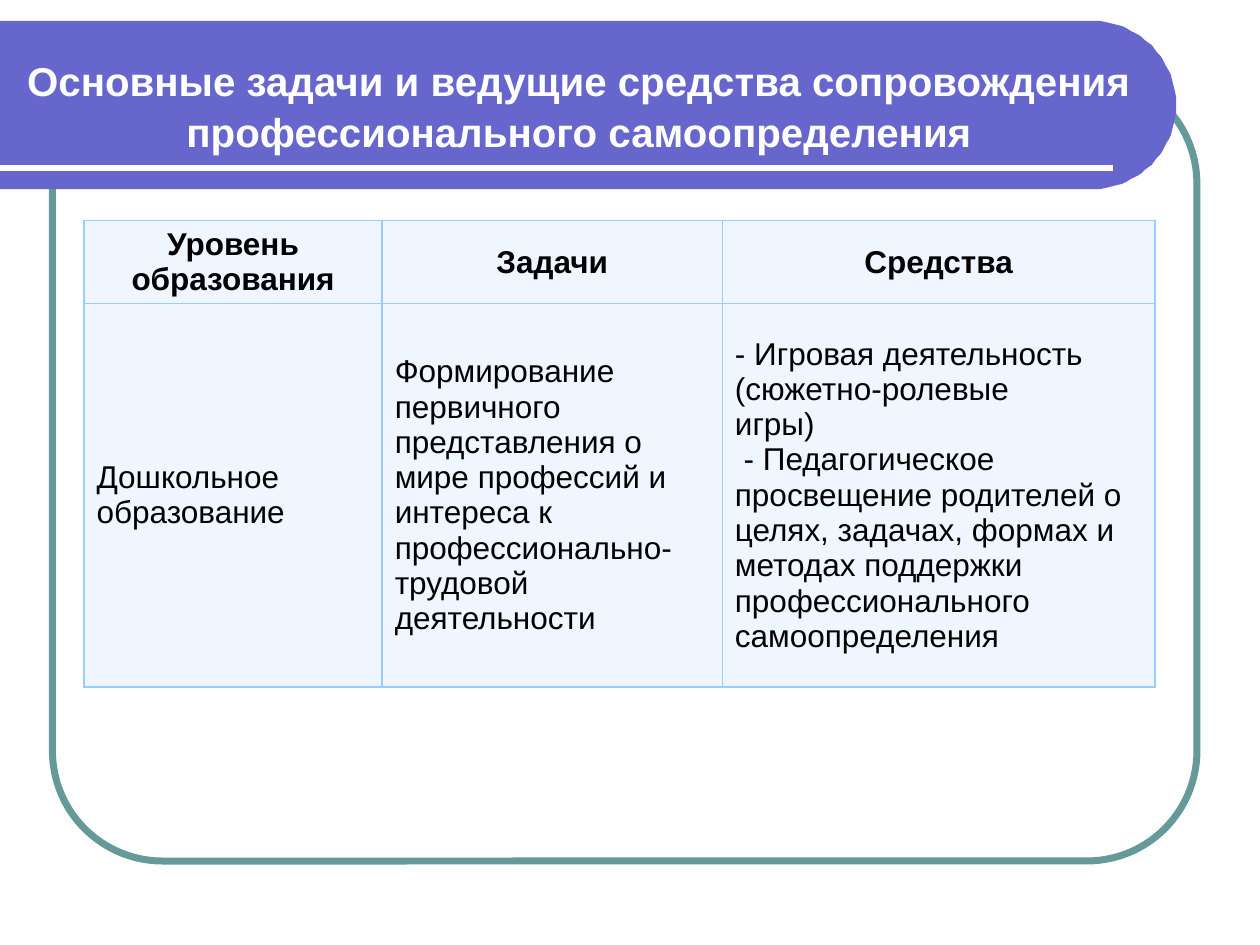
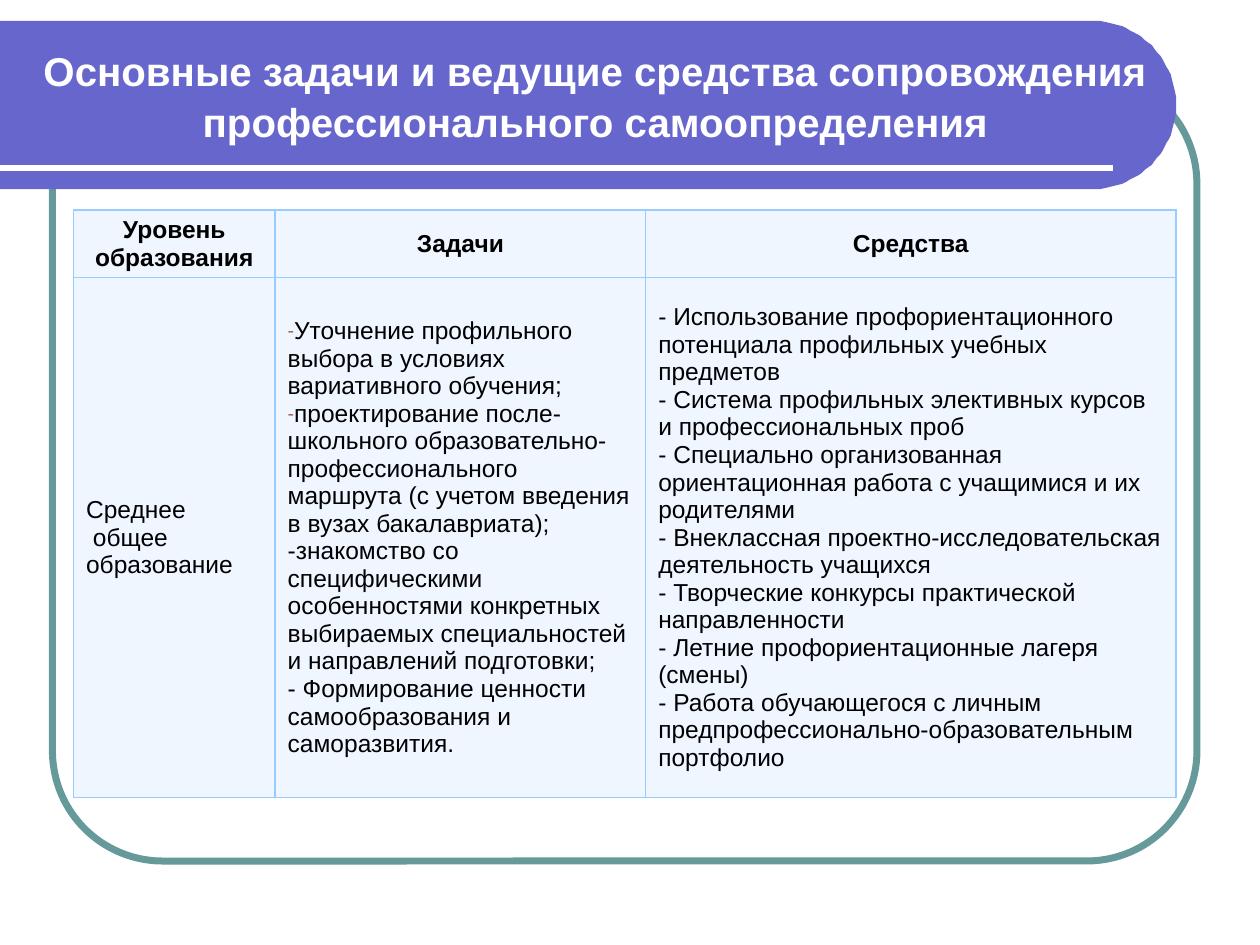
import math
from lxml import etree
from pptx import Presentation, util as u
from pptx.dml.color import RGBColor
from pptx.enum import shapes, text
from pptx.oxml import ns

PX = 7620
HUES = {"white": "FFFFFF", "band": "6666CC", "frame": "669999", "edge": "99CCFF",
        "cell": "EFF6FF", "ink": "000000", "dash": "996666"}
TITLE = "Основные задачи и ведущие средства сопровождения профессионального самоопределения"
HEADS = ["Уровень образования", "Задачи", "Средства"]
DASH = "• "

PRESCHOOL = [
    ["Дошкольное образование"],
    ["Формирование первичного представления о мире профессий и интереса к "
     "профессионально-трудовой деятельности"],
    ["- Игровая деятельность (сюжетно-ролевые",
     "игры)",
     " - Педагогическое просвещение родителей о",
     "целях, задачах, формах и методах поддержки профессионального",
     "самоопределения"],
]
SECONDARY = [
    ["Среднее", " общее", "образование"],
    [DASH + "Уточнение профильного выбора в условиях вариативного обучения;",
     DASH + "проектирование после-",
     "школьного образовательно-",
     "профессионального маршрута (с учетом введения в вузах бакалавриата);",
     "-знакомство со специфическими особенностями конкретных выбираемых "
     "специальностей и направлений подготовки;",
     "- Формирование ценности",
     "самообразования и саморазвития."],
    ["- Использование профориентационного",
     "потенциала профильных учебных предметов",
     "- Система профильных элективных курсов",
     "и профессиональных проб",
     "- Специально организованная ориентационная работа с учащимися и их",
     "родителями",
     "- Внеклассная проектно-исследовательская",
     "деятельность учащихся",
     "- Творческие конкурсы практической",
     "направленности",
     "- Летние профориентационные лагеря (смены)",
     "- Работа обучающегося с личным",
     "предпрофессионально-образовательным",
     "портфолио"],
]


def hue(name):
    return RGBColor.from_string(HUES[name])


def node(parent, tag, **attrs):
    return etree.SubElement(parent, ns.qn("a:" + tag), attrs)


class Deck:
    """Holds the shared style and the current slide."""

    def __init__(self):
        self.prs = Presentation()
        self.prs.slide_width, self.prs.slide_height = 1200 * PX, 900 * PX

    def start(self):
        self.slide = self.prs.slides.add_slide(self.prs.slide_layouts[6])
        self.items = self.slide.shapes
        self.frame(50, 70, 1090, 750)
        self.band(20, 1120, 80)
        self.rule(0, 1060, 160)

    def frame(self, *box):
        item = self.items.add_shape(shapes.MSO_SHAPE.ROUNDED_RECTANGLE, *[n * PX for n in box])
        item.adjustments[0] = 0.14
        item.shadow.inherit = False
        item.fill.background()
        item.line.color.rgb = hue("frame")
        item.line.width = u.Pt(4)

    def band(self, top, right, radius):
        hub, mid = right - radius, top + radius
        turns = [math.radians(deg) for deg in range(-90, 91, 3)]
        arc = [(hub + radius * math.cos(a), mid + radius * math.sin(a)) for a in turns]
        edge = self.items.build_freeform(0, top, scale=PX)
        edge.add_line_segments(arc + [(0, mid + radius)], close=True)
        item = edge.convert_to_shape()
        item.shadow.inherit = False
        item.fill.solid()
        item.fill.fore_color.rgb = hue("band")
        item.line.fill.background()

    def rule(self, left, right, top):
        item = self.items.add_connector(
            shapes.MSO_CONNECTOR.STRAIGHT, left * PX, top * PX, right * PX, top * PX)
        item.line.color.rgb = hue("white")
        item.line.width = u.Pt(3)
        node(item._element.spPr, "effectLst")

    def label(self, para, words, size, color, bold=False, center=False):
        para.alignment = text.PP_ALIGN.CENTER if center else text.PP_ALIGN.LEFT
        run = para.add_run()
        run.text = words
        run.font.name, run.font.size, run.font.bold = "Arial", u.Pt(size), bold
        run.font.color.rgb = hue(color)

    def title(self, *box):
        body = self.items.add_textbox(*[n * PX for n in box]).text_frame
        body.word_wrap = True
        body.vertical_anchor = text.MSO_ANCHOR.MIDDLE
        body.paragraphs[0].line_spacing = 1.05
        self.label(body.paragraphs[0], TITLE, 23, "white", bold=True, center=True)

    def bullet(self, para):
        props = para._p.get_or_add_pPr()
        props.set("marL", "0")
        props.set("indent", "0")
        node(node(props, "buClr"), "srgbClr", val=HUES["dash"])
        node(props, "buSzPct", val="80000")
        node(props, "buFont", typeface="Arial")
        node(props, "buChar", char="-")

    def cell(self, cell, lines, size, head):
        props = cell._tc.get_or_add_tcPr()
        for side in "LRTB":
            edge = node(props, "ln" + side, w=str(u.Pt(1)))
            node(node(edge, "solidFill"), "srgbClr", val=HUES["edge"])
        cell.fill.solid()
        cell.fill.fore_color.rgb = hue("cell")
        cell.vertical_anchor = text.MSO_ANCHOR.MIDDLE
        body = cell.text_frame
        for i, line in enumerate(lines):
            para = body.add_paragraph() if i else body.paragraphs[0]
            self.label(para, line.removeprefix(DASH), size, "ink", bold=head, center=head)
            if line.startswith(DASH):
                self.bullet(para)

    def table(self, left, top, cols, rows, size, texts):
        grid = self.items.add_table(len(rows), len(cols), left * PX, top * PX,
                                    sum(cols) * PX, sum(rows) * PX).table
        grid.horz_banding = False
        for col, wide in zip(grid.columns, cols):
            col.width = wide * PX
        for row, tall in zip(grid.rows, rows):
            row.height = tall * PX
        for r, line in enumerate([[[head] for head in HEADS], texts]):
            for c, lines in enumerate(line):
                self.cell(grid.cell(r, c), lines, size, head=r == 0)


def main():
    deck = Deck()
    deck.start()
    deck.table(80, 210, [284, 324, 412], [79, 365], 18, PRESCHOOL)
    deck.title(0, 40, 1104, 120)
    deck.start()
    deck.table(70, 200, [192, 353, 505], [64, 495], 14, SECONDARY)
    deck.title(25, 30, 1085, 120)
    deck.prs.save("out.pptx")


if __name__ == "__main__":
    main()
